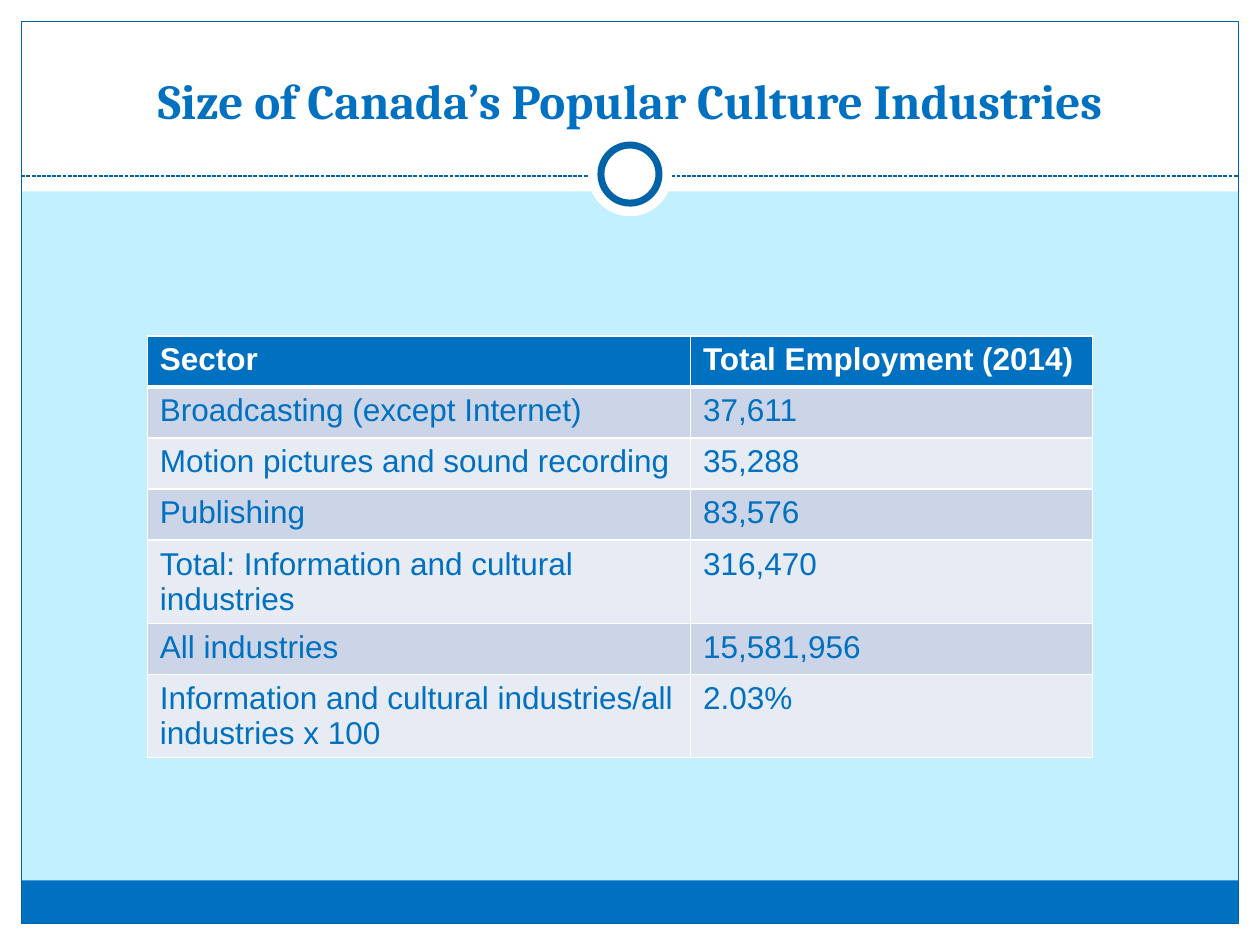
from collections import namedtuple

from lxml import etree
from pptx import Presentation
from pptx.dml.color import RGBColor
from pptx.enum.dml import MSO_LINE
from pptx.enum.shapes import MSO_CONNECTOR, MSO_SHAPE
from pptx.enum.text import MSO_ANCHOR, PP_ALIGN
from pptx.oxml.ns import qn
from pptx.util import Cm, Pt

RECTANGLE, OVAL = MSO_SHAPE.RECTANGLE, MSO_SHAPE.OVAL
STRAIGHT = MSO_CONNECTOR.STRAIGHT
DASHED = MSO_LINE.SQUARE_DOT
CENTER, LEFT = PP_ALIGN.CENTER, PP_ALIGN.LEFT
BOTTOM = MSO_ANCHOR.BOTTOM

WHITE = RGBColor(0xFF, 0xFF, 0xFF)
BLUE = RGBColor(0x00, 0x70, 0xC0)
DARK_BLUE = RGBColor(0x00, 0x63, 0xA9)
SKY = RGBColor(0xC3, 0xF0, 0xFF)
BAND_DARK = RGBColor(0xCC, 0xD5, 0xE8)
BAND_LIGHT = RGBColor(0xE7, 0xEB, 0xF4)

Box = namedtuple("Box", "left top width height")

TITLE = "Size of Canada’s Popular Culture Industries"
ROWS = [
    ("Sector", "Total Employment (2014)"),
    ("Broadcasting (except Internet)", "37,611"),
    ("Motion pictures and sound recording", "35,288"),
    ("Publishing", "83,576"),
    ("Total: Information and cultural industries", "316,470"),
    ("All industries", "15,581,956"),
    ("Information and cultural industries/all industries x 100", "2.03%"),
]


def write_text(frame, text, font="Arial", size=18, color=BLUE, bold=False, align=LEFT):
    para = frame.paragraphs[0]
    para.alignment = align
    span = para.add_run()
    span.text = text
    span.font.name = font
    span.font.size = Pt(size)
    span.font.color.rgb = color
    span.font.bold = bold


def add_panel(page, box, kind=RECTANGLE, fill=None, line=None, weight=0.75):
    shape = page.shapes.add_shape(kind, *box)
    shape.shadow.inherit = False
    if fill is None:
        shape.fill.background()
    else:
        shape.fill.solid()
        shape.fill.fore_color.rgb = fill
    if line is None:
        shape.line.fill.background()
    else:
        shape.line.color.rgb = line
        shape.line.width = Pt(weight)


def add_circle(page, center_x, center_y, diameter, **style):
    radius = diameter // 2
    box = Box(center_x - radius, center_y - radius, diameter, diameter)
    add_panel(page, box, kind=OVAL, fill=WHITE, **style)


def draw_frame(page, box):
    margin, header, footer = Cm(0.43), Cm(3.86), Cm(0.87)
    right, bottom = box.left + box.width, box.top + box.height
    inner = Box(box.left + margin, box.top + margin,
                box.width - 2 * margin, box.height - 2 * margin)

    # White header and margins
    for band in (
        Box(box.left, bottom - margin, box.width, margin),
        Box(box.left, box.top, box.width, header),
        Box(box.left, box.top, margin, box.height),
        Box(right - margin, box.top, margin, box.height),
    ):
        add_panel(page, band, fill=WHITE)

    # Footer band and outline
    footer_top = bottom - margin - footer
    add_panel(page, Box(inner.left, footer_top, inner.width, footer), fill=BLUE)
    add_panel(page, inner, line=DARK_BLUE)

    # Dashed divider
    divider_y = box.top + Cm(3.55)
    divider = page.shapes.add_connector(
        STRAIGHT, inner.left, divider_y, inner.left + inner.width, divider_y)
    divider.line.color.rgb = DARK_BLUE
    divider.line.width = Pt(0.75)
    divider.line.dash_style = DASHED
    etree.SubElement(divider._element.spPr, qn("a:effectLst"))

    # Ring on the divider
    center_x, center_y = box.left + box.width // 2, box.top + Cm(3.51)
    add_circle(page, center_x, center_y, Cm(1.7))
    add_circle(page, center_x, center_y, Cm(1.17), line=DARK_BLUE, weight=4)


def place_title(page, box):
    title = page.shapes.title
    title.left, title.top, title.width, title.height = box
    title.text_frame.vertical_anchor = BOTTOM
    title.text_frame.word_wrap = True
    write_text(title.text_frame, TITLE, font="Cambria", size=28, bold=True, align=CENTER)
    # Bring the title in front of the header band
    page.shapes._spTree.append(title._element)


def set_borders(cell, **weights):
    properties = cell._tc.get_or_add_tcPr()
    for side in "LRTB":
        line = etree.SubElement(properties, qn(f"a:ln{side}"),
                                w=str(Pt(weights.get(side, 1))))
        fill = etree.SubElement(line, qn("a:solidFill"))
        etree.SubElement(fill, qn("a:srgbClr"), val=str(WHITE))


def draw_table(page, box):
    first_column = Cm(10.95)
    table = page.shapes.add_table(len(ROWS), len(ROWS[0]), *box).table
    table.columns[0].width = first_column
    table.columns[1].width = box.width - first_column
    for row_index, values in enumerate(ROWS):
        header = row_index == 0
        band = BAND_DARK if row_index % 2 else BAND_LIGHT
        for column_index, value in enumerate(values):
            cell = table.cell(row_index, column_index)
            # A thick rule parts the header from the body
            set_borders(cell, B=3 if header else 1, T=3 if row_index == 1 else 1)
            cell.fill.solid()
            cell.fill.fore_color.rgb = BLUE if header else band
            write_text(cell.text_frame, value, color=WHITE if header else BLUE, bold=header)


def main():
    deck = Presentation()
    deck.slide_width, deck.slide_height = Cm(25.4), Cm(19.05)
    page = deck.slides.add_slide(deck.slide_layouts[5])
    page.background.fill.solid()
    page.background.fill.fore_color.rgb = SKY

    draw_frame(page, Box(0, 0, deck.slide_width, deck.slide_height))
    place_title(page, Box(Cm(0.85), Cm(0.64), Cm(23.7), Cm(2.1)))
    draw_table(page, Box(Cm(2.97), Cm(6.77), Cm(19.05), Cm(7.21)))
    deck.save("out.pptx")


if __name__ == "__main__":
    main()
